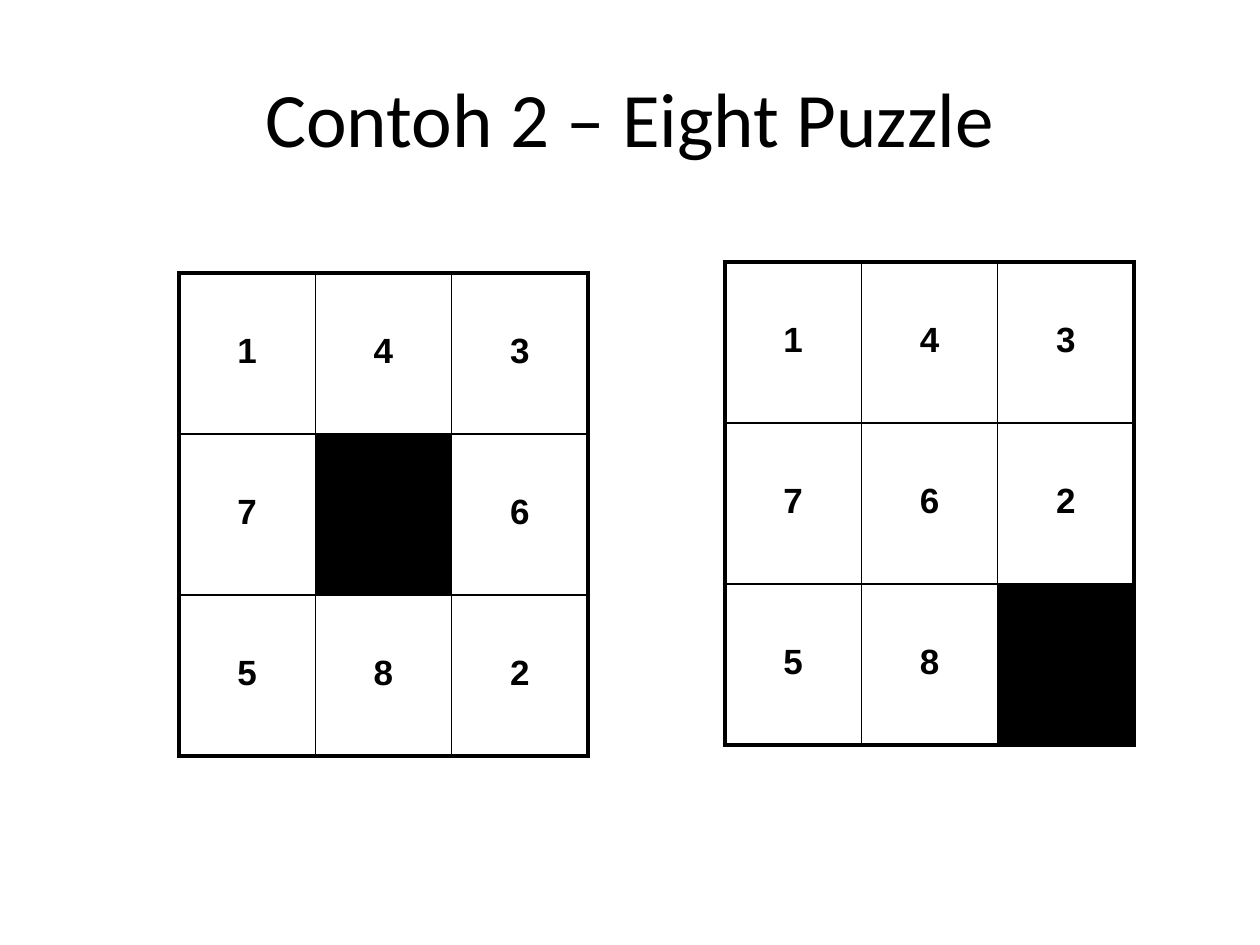
from lxml import etree
from pptx import Presentation
from pptx import util as u
from pptx.dml.color import RGBColor
from pptx.enum import text
from pptx.oxml.ns import qn

SCALE = 914400 / 126
BLACK = "000000"
THIN, THICK = 1, 2.25
START = ["143", "7 6", "582"]
GOAL = ["143", "762", "58 "]


def px(length):
    return u.Emu(round(length * SCALE))


def paint(color_format, value):
    color_format.rgb = RGBColor.from_string(value)


def style_font(paragraph, name, size, bold=False):
    paragraph.font.name = name
    paragraph.font.size = u.Pt(size)
    paragraph.font.bold = bold
    paint(paragraph.font.color, BLACK)


def add_title(slide, box, wording):
    frame = slide.shapes.add_textbox(*map(px, box)).text_frame
    frame.word_wrap = True
    frame.vertical_anchor = text.MSO_ANCHOR.MIDDLE
    paragraph = frame.paragraphs[0]
    paragraph.text = wording
    paragraph.alignment = text.PP_ALIGN.CENTER
    style_font(paragraph, "Calibri", 44)


def set_borders(cell, row, column):
    outer_sides = {"L": column == 0, "R": column == 2, "T": row == 0, "B": row == 2}
    properties = cell._tc.get_or_add_tcPr()
    for side, outer in outer_sides.items():
        width = u.Pt(THICK if outer else THIN)
        line = etree.SubElement(properties, qn(f"a:ln{side}"), w=str(width))
        fill = etree.SubElement(line, qn("a:solidFill"))
        etree.SubElement(fill, qn("a:srgbClr"), val=BLACK)


def write_number(cell, number):
    cell.vertical_anchor = text.MSO_ANCHOR.MIDDLE
    paragraph = cell.text_frame.paragraphs[0]
    paragraph.text = number
    paragraph.alignment = text.PP_ALIGN.CENTER
    paragraph.line_spacing = 0.89
    properties = paragraph._p.get_or_add_pPr()
    for tag, percent in (("a:spcBef", 50), ("a:spcAft", 10)):
        spacing = etree.SubElement(properties, qn(tag))
        etree.SubElement(spacing, qn("a:spcPct"), val=str(percent * 1000))
    style_font(paragraph, "Arial", 20, True)


def add_puzzle(slide, box, numbers):
    table = slide.shapes.add_table(3, 3, *map(px, box)).table
    table.first_row = False
    table.horz_banding = False
    for row, line in enumerate(numbers):
        for column, number in enumerate(line):
            cell = table.cell(row, column)
            set_borders(cell, row, column)
            if number == " ":
                cell.fill.solid()
                paint(cell.fill.fore_color, BLACK)
            else:
                cell.fill.background()
                write_number(cell, number)


def main():
    presentation = Presentation()
    presentation.slide_width = px(1260)
    presentation.slide_height = px(945)
    slide = presentation.slides.add_slide(presentation.slide_layouts[6])
    add_title(slide, (63, 38, 1134, 158), "Contoh 2 – Eight Puzzle")
    add_puzzle(slide, (179, 273, 409, 483), START)
    add_puzzle(slide, (725, 262, 409, 483), GOAL)
    presentation.save("out.pptx")


if __name__ == "__main__":
    main()
